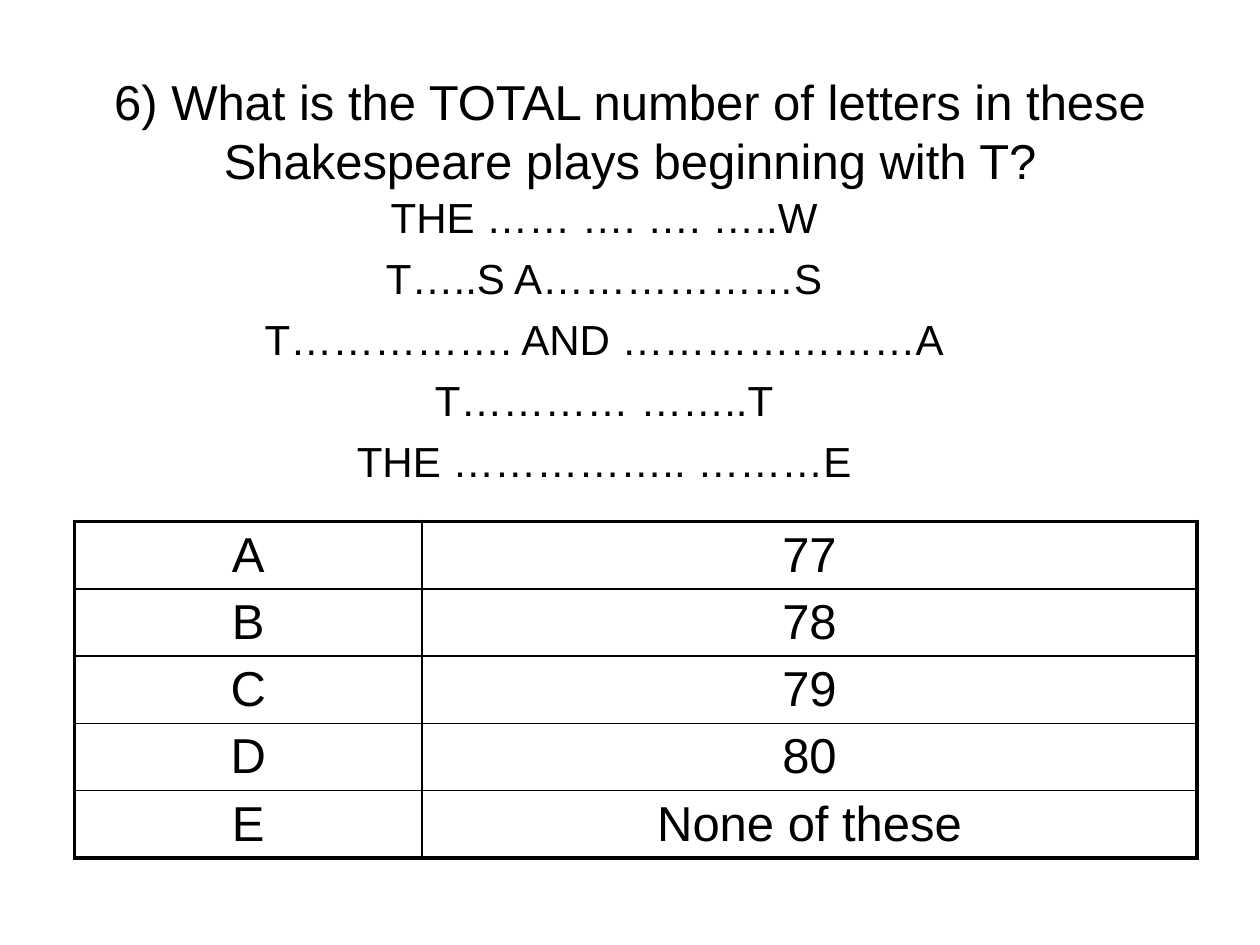
import lxml.etree
import pptx
import pptx.dml.color
import pptx.enum.text
import pptx.oxml.ns
import pptx.util

Pt = pptx.util.Pt
COLOURS = {"ink": "000000", "paper": "FFFFFF"}
QUESTION = ("6) What is the TOTAL number of letters in these "
            "Shakespeare plays beginning with T?")
PLAYS = ["THE …… …. …. …..W", "T…..S A………………S",
         "T……………. AND …………………A", "T………… ……..T",
         "THE …………….. ………E"]
ANSWERS = [("A", "77"), ("B", "78"), ("C", "79"), ("D", "80"),
           ("E", "None of these")]


def colour(name):
    """Return the named colour as an RGB value."""
    return pptx.dml.color.RGBColor.from_string(COLOURS[name])


def write(para, text, size=28, ink="ink", before=0):
    """Put centred, formatted text in a paragraph."""
    para.alignment = pptx.enum.text.PP_ALIGN.CENTER
    para.space_before = Pt(before)
    span = para.add_run()
    span.text = text
    span.font.name = "Arial"
    span.font.size = Pt(size)
    span.font.color.rgb = colour(ink)


def place(shape, box):
    """Move a placeholder to a box and fix its text size."""
    shape.left, shape.top, shape.width, shape.height = map(Pt, box)
    shape.text_frame.word_wrap = True
    shape.text_frame.auto_size = pptx.enum.text.MSO_AUTO_SIZE.NONE


def hide_bullet(para):
    """Remove the bullet and hanging indent from a paragraph."""
    properties = para._p.get_or_add_pPr()
    properties.set("marL", "0")
    properties.set("indent", "0")
    lxml.etree.SubElement(properties, pptx.oxml.ns.qn("a:buNone"))


def set_border(cell, side, width):
    """Draw one solid border of a cell; side is L, R, T or B."""
    properties = cell._tc.get_or_add_tcPr()
    line = lxml.etree.SubElement(
        properties, pptx.oxml.ns.qn(f"a:ln{side}"), w=str(int(Pt(width))))
    fill = lxml.etree.SubElement(line, pptx.oxml.ns.qn("a:solidFill"))
    lxml.etree.SubElement(
        fill, pptx.oxml.ns.qn("a:srgbClr"), val=COLOURS["ink"])


def add_question(page, box):
    """Fill the title with the question."""
    title = page.shapes.title
    place(title, box)
    title.text_frame.vertical_anchor = pptx.enum.text.MSO_ANCHOR.MIDDLE
    write(title.text_frame.paragraphs[0], QUESTION)


def add_plays(page, box):
    """List the clues to the plays in the body placeholder."""
    body = page.placeholders[1]
    place(body, box)
    frame = body.text_frame
    for index, play in enumerate(PLAYS):
        para = frame.add_paragraph() if index else frame.paragraphs[0]
        write(para, play, size=24, before=6)
        hide_bullet(para)


def add_answers(page, box, label_width=198.7):
    """Add the table of answers with a heavy outer frame."""
    left, top, width, height = box
    last = len(ANSWERS) - 1
    table = page.shapes.add_table(
        len(ANSWERS), 2, *map(Pt, box)).table
    table.first_row = table.horz_banding = False
    table.columns[0].width = Pt(label_width)
    table.columns[1].width = Pt(width - label_width)
    for row, answer in enumerate(ANSWERS):
        table.rows[row].height = Pt(height / len(ANSWERS))
        for column, text in enumerate(answer):
            cell = table.cell(row, column)
            outer = {"L": column == 0, "R": column == 1,
                     "T": row == 0, "B": row == last}
            for side, heavy in outer.items():
                set_border(cell, side, 2.25 if heavy else 1)
            cell.fill.background()
            write(cell.text_frame.paragraphs[0], text)


def main():
    """Build and save the quiz slide."""
    deck = pptx.Presentation()
    deck.slide_width, deck.slide_height = Pt(720), Pt(540)
    page = deck.slides.add_slide(deck.slide_layouts[1])
    page.background.fill.solid()
    page.background.fill.fore_color.rgb = colour("paper")
    add_question(page, (36, 37.5, 648, 74))
    add_answers(page, (42.5, 298, 641.5, 192))
    add_plays(page, (36, 106, 618.5, 158.5))
    deck.save("out.pptx")


if __name__ == "__main__":
    main()
